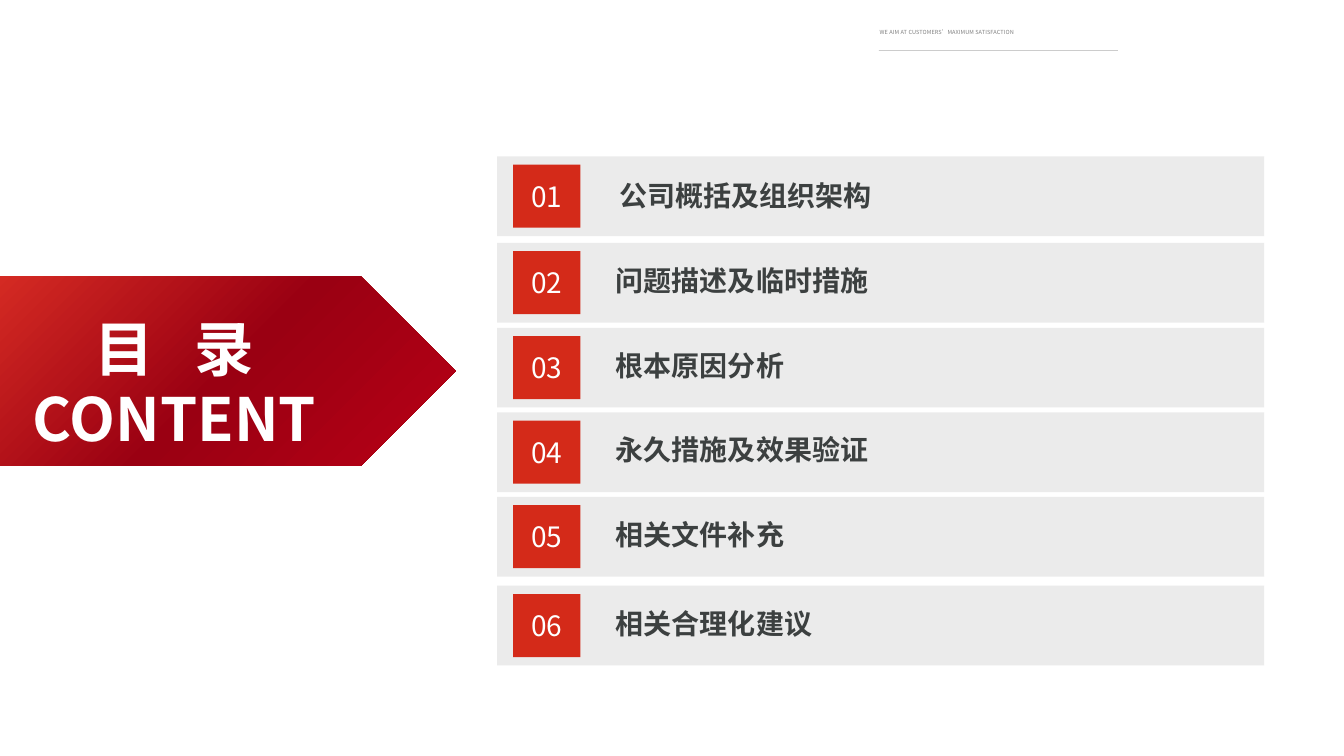
from lxml.etree import SubElement as Sub
from pptx import Presentation
from pptx.dml.color import RGBColor as Rgb
from pptx.enum.shapes import MSO_CONNECTOR as Link, MSO_SHAPE as Kind
from pptx.enum.text import MSO_ANCHOR as Anchor, MSO_AUTO_SIZE as Fit, PP_ALIGN as Align
from pptx.oxml.ns import qn
from pptx.util import Cm, Pt

MOTTO = "WE AIM AT CUSTOMERS’MAXIMUM SATISFACTION"
TITLE = [[("目 ", 950), ("录", 0)], [("CONTENT", 0)]]
TOPICS = [
    ("公司概括及组织架构", 3.94),
    ("问题描述及临时措施", 6.12),
    ("根本原因分析", 8.26),
    ("永久措施及效果验证", 10.39),
    ("相关文件补充", 12.52),
    ("相关合理化建议", 14.76),
]
THEME = {
    "font": "Noto Sans CJK SC",
    "white": "FFFFFF", "ink": "3C4040", "mute": "808080",
    "red": "D42A19", "bar": "D9D9D9",
    "fade": [(0, "D42A23"), (50, "9A0012"), (100, "B70016")],
    "head": 42.6, "item": 20, "tiny": 4,
    "lead": 50, "step": 24,
}
ROW = {"left": 12.53, "wide": 19.33, "high": 2.01}
BOX = {"left": 12.93, "wide": 1.7, "high": 1.59}


def write(para, text, size, color, bold=False, space=0):
    run = para.add_run()
    run.text = text
    font = run.font
    font.size, font.bold, font.name = Pt(size), bold, THEME["font"]
    font.color.rgb = Rgb.from_string(THEME[color])
    props = run._r.get_or_add_rPr()
    Sub(props, qn("a:ea"), typeface=THEME["font"])
    if space:
        props.set("spc", str(space))


def place(shape, left, top, wide, high):
    shape.left, shape.top, shape.width, shape.height = map(Cm, (left, top, wide, high))


def frame(shape, anchor=Anchor.TOP):
    body = shape.text_frame
    body.auto_size, body.word_wrap, body.vertical_anchor = Fit.NONE, True, anchor
    body.margin_left = body.margin_right = body.margin_top = body.margin_bottom = 0
    return body


def fade(props, alpha):
    for tone in props.iter(qn("a:srgbClr")):
        Sub(tone, qn("a:alpha"), val=str(alpha * 1000))


def draw(slide, kind, color, *area):
    shape = slide.shapes.add_shape(kind, *map(Cm, area))
    shape.shadow.inherit = False
    shape.line.fill.background()
    shape.fill.solid()
    shape.fill.fore_color.rgb = Rgb.from_string(THEME[color])
    return shape


def add_header(slide):
    body = frame(slide.shapes.add_textbox(Cm(22.17), Cm(0.74), Cm(7.06), Cm(0.3)))
    write(body.paragraphs[0], MOTTO, THEME["tiny"], "mute", space=9)
    rule = slide.shapes.add_connector(Link.STRAIGHT, Cm(22.15), Cm(1.27), Cm(28.17), Cm(1.27))
    rule.line.width = Pt(0.5)
    rule.line.color.rgb = Rgb.from_string(THEME["mute"])
    props = rule._element.spPr
    fade(props, 40)
    Sub(props, qn("a:effectLst"))


def add_arrow(slide):
    arrow = draw(slide, Kind.PENTAGON, "red", 0, 6.96, 11.48, 4.78)
    arrow.fill.gradient()
    blend = arrow._element.spPr.find(qn("a:gradFill"))
    for part in list(blend):
        blend.remove(part)
    stops = Sub(blend, qn("a:gsLst"))
    for pos, color in THEME["fade"]:
        Sub(Sub(stops, qn("a:gs"), pos=str(pos * 1000)), qn("a:srgbClr"), val=color)
    Sub(blend, qn("a:lin"), ang="2700000", scaled="0")


def add_title(slide):
    title = slide.shapes.title
    place(title, 0.33, 7.89, 8.13, 3.53)
    body = frame(title)
    for i, line in enumerate(TITLE):
        para = body.add_paragraph() if i else body.paragraphs[0]
        para.alignment, para.line_spacing = Align.CENTER, Pt(THEME["lead"])
        for text, space in line:
            write(para, text, THEME["head"], "white", True, space)
    slide.shapes._spTree.append(title._element)


def add_rows(slide):
    drop = (ROW["high"] - BOX["high"]) / 2
    for i, (topic, top) in enumerate(TOPICS, 1):
        bar = draw(slide, Kind.RECTANGLE, "bar", ROW["left"], top, ROW["wide"], ROW["high"])
        fade(bar._element.spPr, 51)
        box = draw(slide, Kind.RECTANGLE, "red", BOX["left"], top + drop, BOX["wide"], BOX["high"])
        para = frame(box, Anchor.MIDDLE).paragraphs[0]
        para.alignment = Align.CENTER
        write(para, f"{i:02}", THEME["item"], "white")


def add_topics(slide):
    holder = slide.placeholders[1]
    place(holder, 15.52, 4.5, 14.2, 12.2)
    body = frame(holder)
    gaps = [0, 36.5, 36.5, 36.5, 36.5, 39.5]
    for i, ((topic, top), gap) in enumerate(zip(TOPICS, gaps)):
        para = body.add_paragraph() if i else body.paragraphs[0]
        props = para._p.get_or_add_pPr()
        props.set("marL", str(0 if i else Cm(0.08)))
        props.set("indent", "0")
        Sub(props, qn("a:buNone"))
        para.line_spacing, para.space_before = Pt(THEME["step"]), Pt(gap)
        write(para, topic, THEME["item"], "ink", True)
    slide.shapes._spTree.append(holder._element)


def main():
    deck = Presentation()
    deck.slide_width, deck.slide_height = Cm(33.87), Cm(19.05)
    slide = deck.slides.add_slide(deck.slide_layouts[1])
    add_header(slide)
    add_arrow(slide)
    add_title(slide)
    add_rows(slide)
    add_topics(slide)
    deck.save("out.pptx")


if __name__ == "__main__":
    main()
